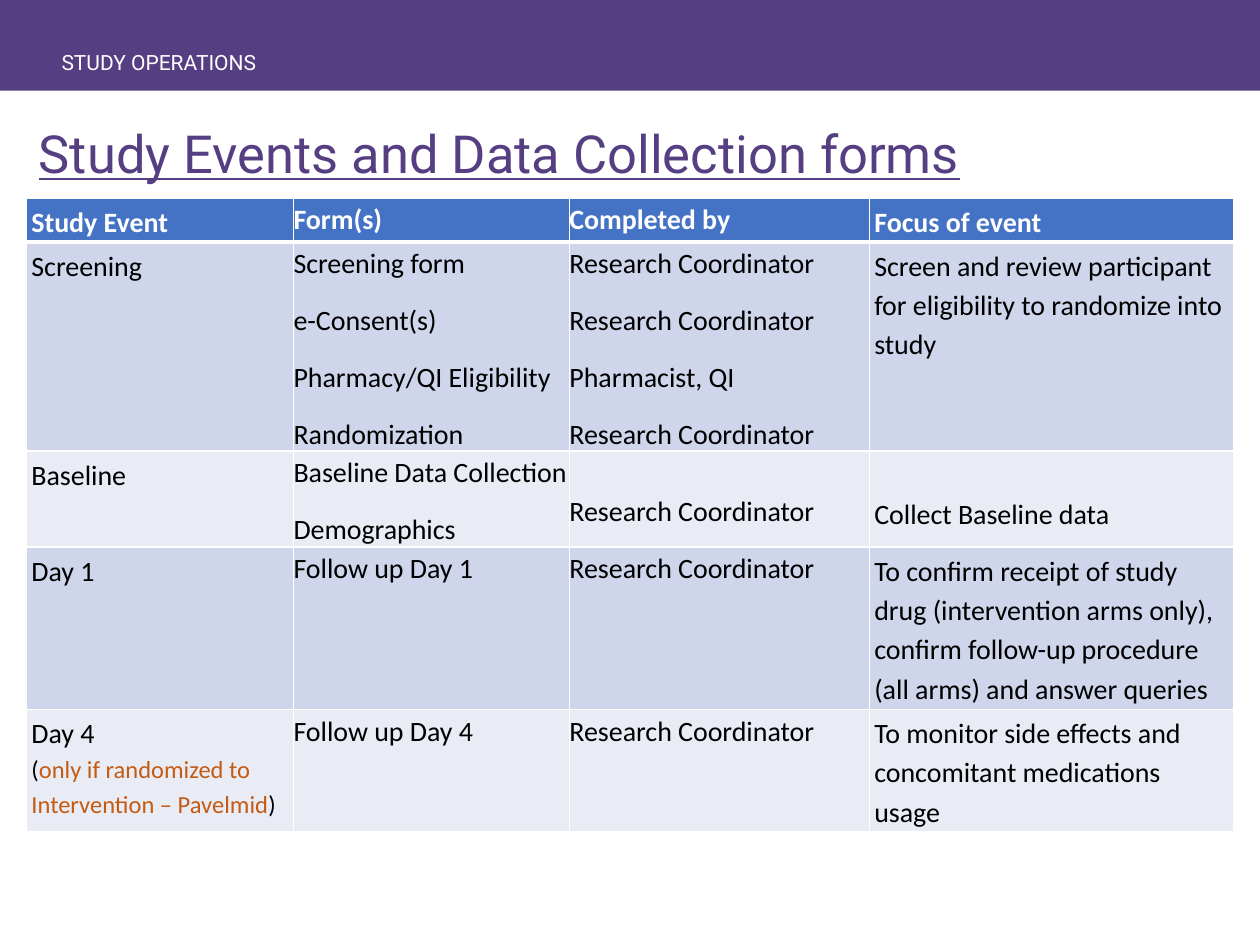
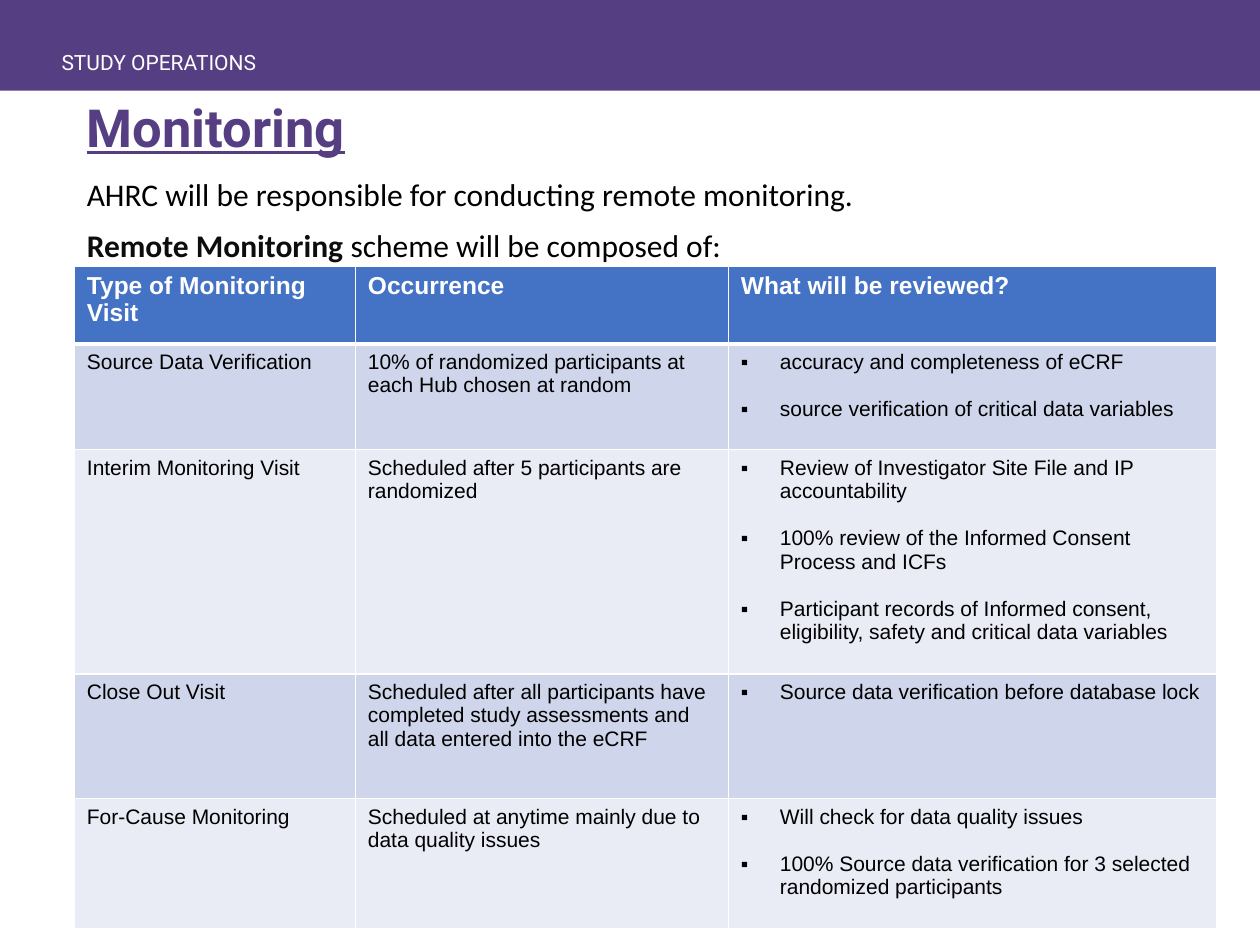
from lxml.etree import SubElement
from pptx import Presentation
from pptx.dml.color import RGBColor
from pptx.enum.shapes import MSO_SHAPE
from pptx.enum.text import MSO_ANCHOR
from pptx.oxml.ns import qn
from pptx.util import Inches, Pt

COLORS = {
    "purple": "563E82", "header": "4472C4", "odd": "CFD5EA", "even": "E9EBF5",
    "white": "FFFFFF", "black": "000000", "ink": "0D0D0D", "orange": "C55A11",
}
SECTION = "STUDY OPERATIONS"
COORDINATOR = "Research Coordinator"

# A cell is a list of paragraphs; a paragraph is a string or a list of (text, font) runs.
EVENTS = [
    [["Study Event"], ["Form(s)"], ["Completed by"], ["Focus of event"]],
    [["Screening"],
     ["Screening form", "e-Consent(s)", "Pharmacy/QI Eligibility", "Randomization"],
     [COORDINATOR, COORDINATOR, "Pharmacist, QI", COORDINATOR],
     ["Screen and review participant for eligibility to randomize into study"]],
    [["Baseline"], ["Baseline Data Collection", "Demographics"],
     [COORDINATOR], ["Collect Baseline data"]],
    [["Day 1"], ["Follow up Day 1"], [COORDINATOR],
     ["To confirm receipt of study drug (intervention arms only), "
      "confirm follow-up procedure (all arms) and answer queries"]],
    [[[("Day 4", {}), ("\n", {}), ("(", {"size": 14}),
       ("only if randomized to Intervention – Pavelmid", {"size": 14, "color": "orange"}),
       (")", {"size": 14})]],
     ["Follow up Day 4"], [COORDINATOR],
     ["To monitor side effects and concomitant medications usage"]],
]
EVENT_COLUMNS = [2.12, 2.19, 2.38, 2.89]
EVENT_ROWS = [0.35, 1.66, 0.76, 1.29, 0.97]
LOWERED_CELLS = [(2, 2), (2, 3)]  # these start one line down
LINE_HEIGHT = 0.31

MONITORING_INTRO = [
    "AHRC will be responsible for conducting remote monitoring.",
    [("Remote Monitoring ", {"bold": True, "color": "ink"}),
     ("scheme will be composed of:", {})],
]
VISITS = [
    [["Type of Monitoring Visit"], ["Occurrence"], ["What will be reviewed?"]],
    [["Source Data Verification"],
     ["10% of randomized participants at each Hub chosen at random"],
     ["accuracy and completeness of eCRF", "source verification of critical data variables"]],
    [["Interim Monitoring Visit"], ["Scheduled after 5 participants are randomized"],
     ["Review of Investigator Site File and IP accountability",
      "100% review of the Informed Consent Process and ICFs",
      "Participant records of Informed consent, eligibility, safety and critical data variables"]],
    [["Close Out Visit"],
     ["Scheduled after all participants have completed study assessments "
      "and all data entered into the eCRF"],
     ["Source data verification before database lock"]],
    [["For-Cause Monitoring"], ["Scheduled at anytime mainly due to data quality issues"],
     ["Will check for data quality issues",
      "100% Source data verification for 3 selected randomized participants"]],
]
VISIT_COLUMNS = [2.23, 2.96, 3.88]
VISIT_ROWS = [0.62, 0.84, 1.78, 0.99, 1.03]
REVIEW_COLUMN = 2


def rgb(name):
    return RGBColor.from_string(COLORS[name])


def set_font(font, size=None, color=None, name=None, bold=None, underline=None):
    if size:
        font.size = Pt(size)
    if color:
        font.color.rgb = rgb(color)
    if name:
        font.name = name
    if bold is not None:
        font.bold = bold
    if underline:
        font.underline = True


def add_bullet(paragraph):
    properties = paragraph._p.get_or_add_pPr()
    properties.set("marL", str(Inches(0.31)))
    properties.set("indent", str(-Inches(0.31)))
    SubElement(properties, qn("a:buFont"), typeface="Arial")
    SubElement(properties, qn("a:buChar"), char="▪")


def write(frame, paragraphs, font, spacing=1.0, before=0, after=0, bulleted=False):
    for index, content in enumerate(paragraphs):
        paragraph = frame.add_paragraph() if index else frame.paragraphs[0]
        if bulleted:
            add_bullet(paragraph)
        paragraph.line_spacing = spacing
        if index:
            paragraph.space_before = Pt(before)
        paragraph.space_after = Pt(after)
        if isinstance(content, str):
            paragraph.add_run().text = content
            set_font(paragraph.font, **font)
            set_font(paragraph.runs[0].font, **font)
            continue
        for text, changes in content:
            if text == "\n":
                paragraph.add_line_break()
                continue
            run = paragraph.add_run()
            run.text = text
            set_font(run.font, **{**font, **changes})


def add_text(slide, box, paragraphs, font, anchor=MSO_ANCHOR.TOP, before=0):
    frame = slide.shapes.add_textbox(*map(Inches, box)).text_frame
    frame.word_wrap = True
    frame.vertical_anchor = anchor
    write(frame, paragraphs, font, spacing=0.9, before=before)


def add_borders(cell, is_header, below_header):
    properties = cell._tc.get_or_add_tcPr()
    widths = {"L": 1, "R": 1, "T": 3 if below_header else 1, "B": 3 if is_header else 1}
    for side, width in widths.items():
        line = SubElement(properties, qn(f"a:ln{side}"), w=str(Pt(width)))
        fill = SubElement(line, qn("a:solidFill"))
        SubElement(fill, qn("a:srgbClr"), val=COLORS["white"])


def add_grid(slide, left, top, columns, heights, rows, fill_cell):
    """Add a banded table; fill_cell(cell, row, column, content, font) writes each cell."""
    table = slide.shapes.add_table(
        len(rows), len(columns), Inches(left), Inches(top),
        Inches(sum(columns)), Inches(sum(heights))).table
    for column, width in zip(table.columns, columns):
        column.width = Inches(width)
    for r, (cells, height) in enumerate(zip(rows, heights)):
        table.rows[r].height = Inches(height)
        band = "header" if r == 0 else "odd" if r % 2 else "even"
        font = {"color": "black" if r else "white", "bold": r == 0}
        for c, content in enumerate(cells):
            cell = table.cell(r, c)
            add_borders(cell, r == 0, r == 1)
            cell.fill.solid()
            cell.fill.fore_color.rgb = rgb(band)
            fill_cell(cell, r, c, content, font)


def fill_event(cell, row, column, content, font):
    outer = column in (0, len(EVENT_COLUMNS) - 1)
    cell.margin_left = cell.margin_right = Inches(0.04 if outer else 0)
    cell.margin_top = cell.margin_bottom = Inches(0.02 if outer else 0)
    if (row, column) in LOWERED_CELLS:
        cell.margin_top += Inches(LINE_HEIGHT)
    write(cell.text_frame, content, {**font, "size": 16, "name": "Calibri"},
          spacing=1.15, after=10)


def fill_visit(cell, row, column, content, font):
    bulleted = row > 0 and column == REVIEW_COLUMN
    write(cell.text_frame, content, {**font, "size": 12 if row else 14, "name": "Arial"},
          before=13.5, bulleted=bulleted)


def add_slide(deck, title, title_box, bold=False):
    slide = deck.slides.add_slide(deck.slide_layouts[6])
    band = slide.shapes.add_shape(
        MSO_SHAPE.RECTANGLE, *map(Inches, (-0.01, -0.02, 10.02, 0.74)))
    band.shadow.inherit = False
    band.fill.solid()
    band.fill.fore_color.rgb = rgb("purple")
    band.line.fill.background()
    add_text(slide, (0.39, 0.37, 2.2, 0.32), [SECTION],
             {"size": 12, "name": "Roboto", "color": "white"})
    add_text(slide, title_box, [title],
             {"size": 30, "name": "Roboto", "color": "purple", "bold": bold, "underline": True},
             anchor=MSO_ANCHOR.MIDDLE)
    return slide


def main():
    deck = Presentation()
    deck.slide_width, deck.slide_height = Inches(10), Inches(7.5)

    events = add_slide(deck, "Study Events and Data Collection forms", (0.21, 0.91, 8.62, 0.67))
    add_grid(events, 0.21, 1.57, EVENT_COLUMNS, EVENT_ROWS, EVENTS, fill_event)

    monitoring = add_slide(deck, "Monitoring", (0.59, 0.69, 8.62, 0.69), bold=True)
    add_text(monitoring, (0.59, 1.37, 8.62, 0.74), MONITORING_INTRO,
             {"size": 18, "name": "Calibri", "color": "black"}, before=10)
    add_grid(monitoring, 0.59, 2.11, VISIT_COLUMNS, VISIT_ROWS, VISITS, fill_visit)

    deck.save("out.pptx")


if __name__ == "__main__":
    main()
